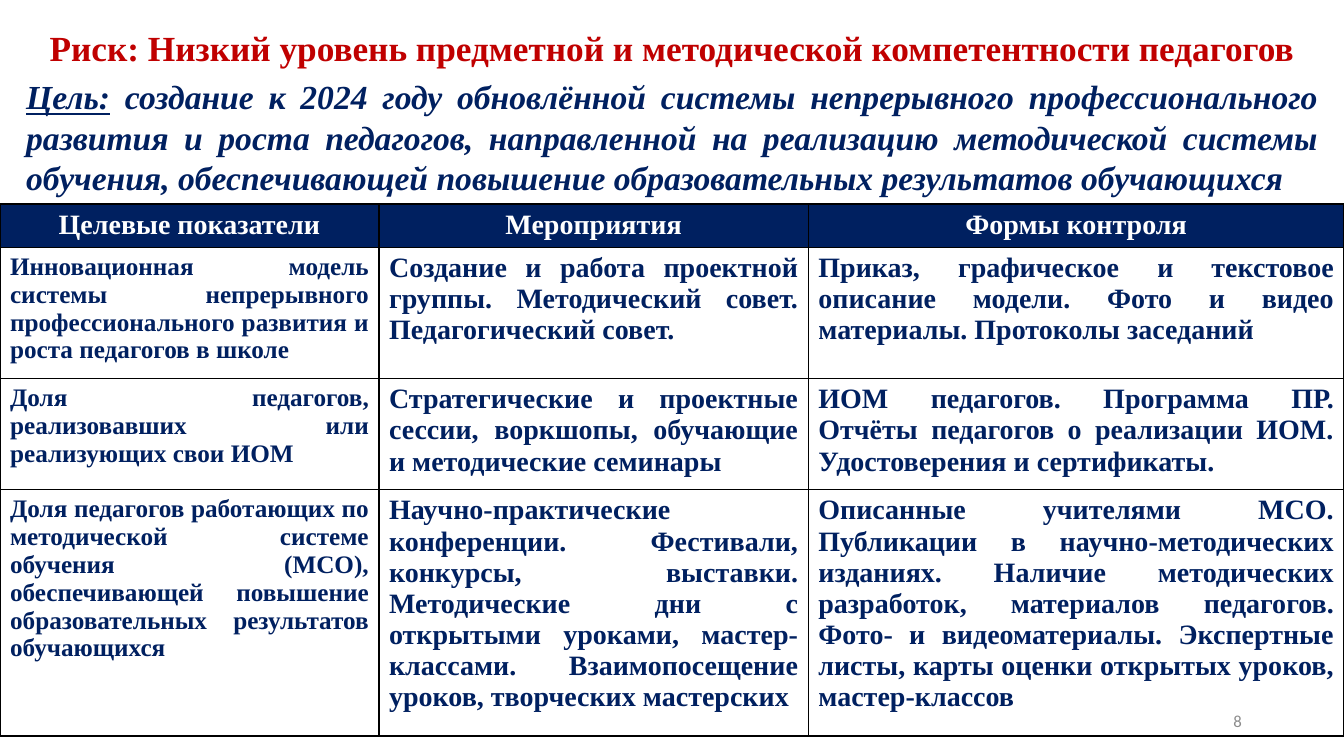
from dataclasses import dataclass

from lxml import etree
from pptx import Presentation
from pptx.dml.color import RGBColor
from pptx.enum.text import MSO_ANCHOR, MSO_AUTO_SIZE, PP_ALIGN
from pptx.oxml.ns import qn
from pptx.util import Cm, Pt

CENTER, JUSTIFY, RIGHT = PP_ALIGN.CENTER, PP_ALIGN.JUSTIFY, PP_ALIGN.RIGHT
TOP, MIDDLE = MSO_ANCHOR.TOP, MSO_ANCHOR.MIDDLE
FIXED, GROW = MSO_AUTO_SIZE.NONE, MSO_AUTO_SIZE.SHAPE_TO_FIT_TEXT
TITLE_ONLY = 5


@dataclass(frozen=True)
class Theme:
    """Fonts, colours and type sizes of the slide."""
    serif: str = "Times New Roman"
    sans: str = "Calibri"
    navy: str = "002060"
    red: str = "C00000"
    white: str = "FFFFFF"
    black: str = "000000"
    grey: str = "8C8C8C"
    title: float = 25.2
    goal: float = 24
    table: float = 20
    indicator: float = 18
    number: float = 12


THEME = Theme()
COLUMN_WIDTHS = (9.55, 10.82, 13.5)
ROW_HEIGHTS = (1.09, 3.3, 2.8, 6.2)
HEADINGS = ("Целевые показатели", "Мероприятия", "Формы контроля")
MEASURES = (
    (
        "Инновационная модель системы непрерывного профессионального развития "
        "и роста педагогов в школе",
        "Создание и работа проектной группы. Методический совет. "
        "Педагогический совет.",
        "Приказ, графическое и текстовое описание модели. Фото и видео "
        "материалы. Протоколы заседаний",
    ),
    (
        "Доля педагогов, реализовавших или реализующих свои ИОМ",
        "Стратегические и проектные сессии, воркшопы, обучающие и "
        "методические семинары",
        "ИОМ педагогов. Программа ПР. Отчёты педагогов о реализации ИОМ. "
        "Удостоверения и сертификаты.",
    ),
    (
        "Доля педагогов работающих по методической системе обучения (МСО), "
        "обеспечивающей повышение образовательных результатов обучающихся",
        "Научно-практические конференции. Фестивали, конкурсы, выставки. "
        "Методические дни с открытыми уроками, мастер-классами. "
        "Взаимопосещение уроков, творческих мастерских",
        "Описанные учителями МСО. Публикации в научно-методических изданиях. "
        "Наличие методических разработок, материалов педагогов. Фото- и "
        "видеоматериалы. Экспертные листы, карты оценки открытых уроков, "
        "мастер-классов",
    ),
)


def set_attributes(target, values):
    """Set each named attribute of the target."""
    for name, value in values.items():
        setattr(target, name, value)


def add_span(para, text, size, color, **extra):
    """Append one formatted run to a paragraph."""
    span = para.add_run()
    span.text = text
    span.font.color.rgb = RGBColor.from_string(color)
    set_attributes(span.font, {"name": THEME.serif, "size": Pt(size), "bold": True, **extra})


def add_title(page, text):
    """Place the heading in the title placeholder."""
    title = page.shapes.title
    set_attributes(title, {"left": Cm(0), "top": Cm(0.23), "width": Cm(33.87), "height": Cm(2.08)})
    set_attributes(title.text_frame, {
        "word_wrap": True, "auto_size": FIXED, "vertical_anchor": MIDDLE})
    para = title.text_frame.paragraphs[0]
    set_attributes(para, {"alignment": CENTER, "line_spacing": 0.9})
    add_span(para, text, THEME.title, THEME.red)


def add_text_box(page, place, alignment, anchor, fit):
    """Add a wrapping text box and return its first paragraph."""
    box = page.shapes.add_textbox(*(Cm(length) for length in place))
    set_attributes(box.text_frame, {
        "word_wrap": True, "auto_size": fit, "vertical_anchor": anchor})
    para = box.text_frame.paragraphs[0]
    para.alignment = alignment
    return para


def add_borders(cell):
    """Draw a thin black line on every side of a cell."""
    properties = cell._tc.get_or_add_tcPr()
    for side in ("a:lnL", "a:lnR", "a:lnT", "a:lnB"):
        line = etree.SubElement(properties, qn(side), w=str(Pt(1)))
        fill = etree.SubElement(line, qn("a:solidFill"))
        etree.SubElement(fill, qn("a:srgbClr"), val=THEME.black)


def fill_cell(cell, text, size, color, background, alignment):
    """Write and format one table cell."""
    add_borders(cell)
    cell.fill.solid()
    cell.fill.fore_color.rgb = RGBColor.from_string(background)
    para = cell.text_frame.paragraphs[0]
    para.alignment = alignment
    add_span(para, text, size, color)


def add_measures_table(page):
    """Add the table of indicators, measures and controls."""
    frame = page.shapes.add_table(
        len(ROW_HEIGHTS), len(COLUMN_WIDTHS), Cm(0), Cm(5.14),
        Cm(sum(COLUMN_WIDTHS)), Cm(sum(ROW_HEIGHTS)))
    table = frame.table
    for column, width in zip(table.columns, COLUMN_WIDTHS):
        column.width = Cm(width)
    for row, height in zip(table.rows, ROW_HEIGHTS):
        row.height = Cm(height)
    for index, heading in enumerate(HEADINGS):
        fill_cell(table.cell(0, index), heading, THEME.table, THEME.white, THEME.navy, CENTER)
    for row_index, texts in enumerate(MEASURES, start=1):
        for index, text in enumerate(texts):
            size = THEME.table if index else THEME.indicator
            fill_cell(table.cell(row_index, index), text, size, THEME.navy, THEME.white, JUSTIFY)


def main():
    """Build and save the slide."""
    deck = Presentation()
    set_attributes(deck, {"slide_width": Cm(33.87), "slide_height": Cm(19.05)})
    page = deck.slides.add_slide(deck.slide_layouts[TITLE_ONLY])
    add_title(page, "Риск: Низкий уровень предметной и методической компетентности педагогов")
    goal = add_text_box(page, (0.41, 1.8, 33.05, 3.33), JUSTIFY, TOP, GROW)
    add_span(goal, "Цель:", THEME.goal, THEME.navy, italic=True, underline=True)
    add_span(
        goal,
        " создание к 2024 году обновлённой системы непрерывного профессионального "
        "развития и роста педагогов, направленной на реализацию методической системы "
        "обучения, обеспечивающей повышение образовательных результатов обучающихся",
        THEME.goal, THEME.navy, italic=True)
    add_measures_table(page)
    number = add_text_box(page, (23.93, 17.65, 7.62, 1.02), RIGHT, MIDDLE, FIXED)
    add_span(number, "8", THEME.number, THEME.grey, name=THEME.sans, bold=False)
    deck.save("out.pptx")


if __name__ == "__main__":
    main()
